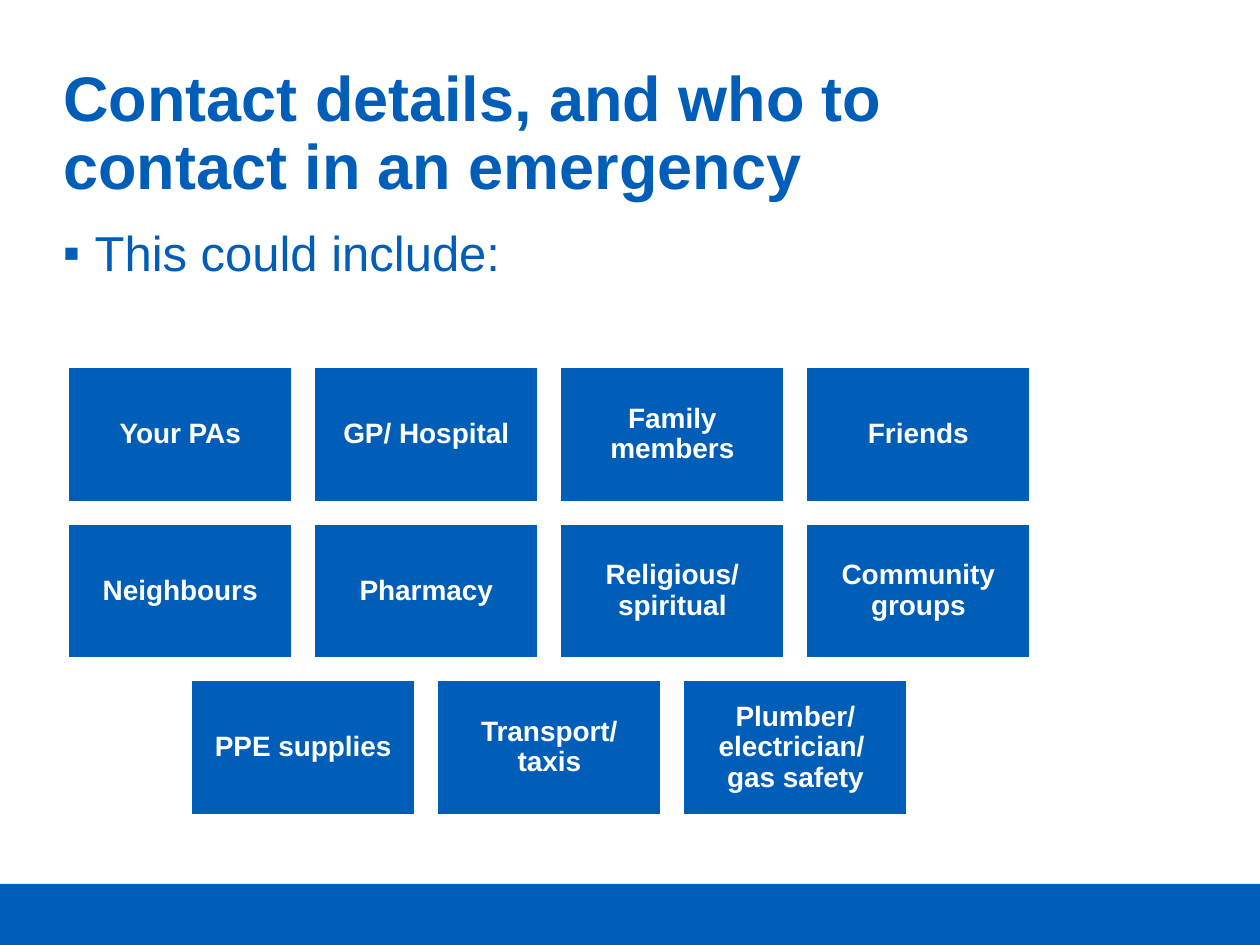
from lxml.etree import SubElement
from pptx import Presentation
from pptx.dml.color import RGBColor
from pptx.enum.shapes import MSO_SHAPE
from pptx.enum.text import MSO_ANCHOR, PP_ALIGN
from pptx.oxml.ns import qn
from pptx.util import Cm, Pt

TITLE = "Contact details, and who to contact in an emergency"
INTRO = "This could include:"
CONTACT_ROWS = [
    ["Your PAs", "GP/ Hospital", "Family members", "Friends"],
    ["Neighbours", "Pharmacy", "Religious/ spiritual", "Community groups"],
    ["PPE supplies", "Transport/ taxis", "Plumber/ electrician/ \vgas safety"],
]
COLOURS = {"blue": "005EB8", "white": "FFFFFF"}
FONT = "Arial"
SLIDE_WIDTH, SLIDE_HEIGHT, FOOTER_HEIGHT = 25.4, 19.05, 1.23
TEXT_LEFT, TEXT_WIDTH = 1.02, 19.4
GRID_LEFT, GRID_TOP = 1.38, 7.4
CARD_WIDTH, CARD_HEIGHT, GAP = 4.51, 2.71, 0.45


def colour(name):
    return RGBColor.from_string(COLOURS[name])


def place(shape, left, top, width, height):
    shape.left, shape.top = Cm(left), Cm(top)
    shape.width, shape.height = Cm(width), Cm(height)


def write(shape, text, size, colour_name, bold, align, anchor):
    frame = shape.text_frame
    frame.text = text
    frame.word_wrap = True
    frame.vertical_anchor = anchor
    paragraph = frame.paragraphs[0]
    paragraph.alignment = align
    paragraph.line_spacing = 0.9
    for run in paragraph.runs:
        run.font.name = FONT
        run.font.size = Pt(size)
        run.font.bold = bold
        run.font.color.rgb = colour(colour_name)


def add_block(slide, left, top, width, height):
    block = slide.shapes.add_shape(
        MSO_SHAPE.RECTANGLE, Cm(left), Cm(top), Cm(width), Cm(height))
    block.shadow.inherit = False
    block.fill.solid()
    block.fill.fore_color.rgb = colour("blue")
    return block


def add_bullet(paragraph):
    properties = paragraph._p.get_or_add_pPr()
    properties.set("marL", str(Cm(0.64)))
    properties.set("indent", str(-Cm(0.64)))
    bullet_colour = SubElement(properties, qn("a:buClr"))
    SubElement(bullet_colour, qn("a:srgbClr"), val=COLOURS["blue"])
    SubElement(properties, qn("a:buFont"), typeface=FONT)
    SubElement(properties, qn("a:buChar"), char="▪")


def add_card(slide, contact, left, top):
    card = add_block(slide, left, top, CARD_WIDTH, CARD_HEIGHT)
    card.line.color.rgb = colour("white")
    card.line.width = Pt(1)
    frame = card.text_frame
    frame.margin_left = frame.margin_right = Cm(0.17)
    frame.margin_top = frame.margin_bottom = Cm(0.17)
    write(card, contact, 16, "white", True, PP_ALIGN.CENTER, MSO_ANCHOR.MIDDLE)


def row_width(count):
    return count * CARD_WIDTH + (count - 1) * GAP


def main():
    """Build the emergency contacts slide."""
    deck = Presentation()
    deck.slide_width, deck.slide_height = Cm(SLIDE_WIDTH), Cm(SLIDE_HEIGHT)
    slide = deck.slides.add_slide(deck.slide_layouts[5])

    footer = add_block(slide, 0, SLIDE_HEIGHT - FOOTER_HEIGHT, SLIDE_WIDTH, FOOTER_HEIGHT)
    footer.line.fill.background()

    title = slide.shapes.title
    place(title, TEXT_LEFT, 1.22, TEXT_WIDTH, 1.8)
    write(title, TITLE, 36, "blue", True, PP_ALIGN.LEFT, MSO_ANCHOR.TOP)

    intro = slide.shapes.add_textbox(Cm(TEXT_LEFT), Cm(4.5), Cm(TEXT_WIDTH), Cm(2.03))
    write(intro, INTRO, 28, "blue", False, PP_ALIGN.LEFT, MSO_ANCHOR.TOP)
    add_bullet(intro.text_frame.paragraphs[0])

    grid_width = row_width(max(map(len, CONTACT_ROWS)))
    for row, contacts in enumerate(CONTACT_ROWS):
        row_left = GRID_LEFT + (grid_width - row_width(len(contacts))) / 2
        row_top = GRID_TOP + row * (CARD_HEIGHT + GAP)
        for column, contact in enumerate(contacts):
            add_card(slide, contact, row_left + column * (CARD_WIDTH + GAP), row_top)

    deck.save("out.pptx")


if __name__ == "__main__":
    main()
